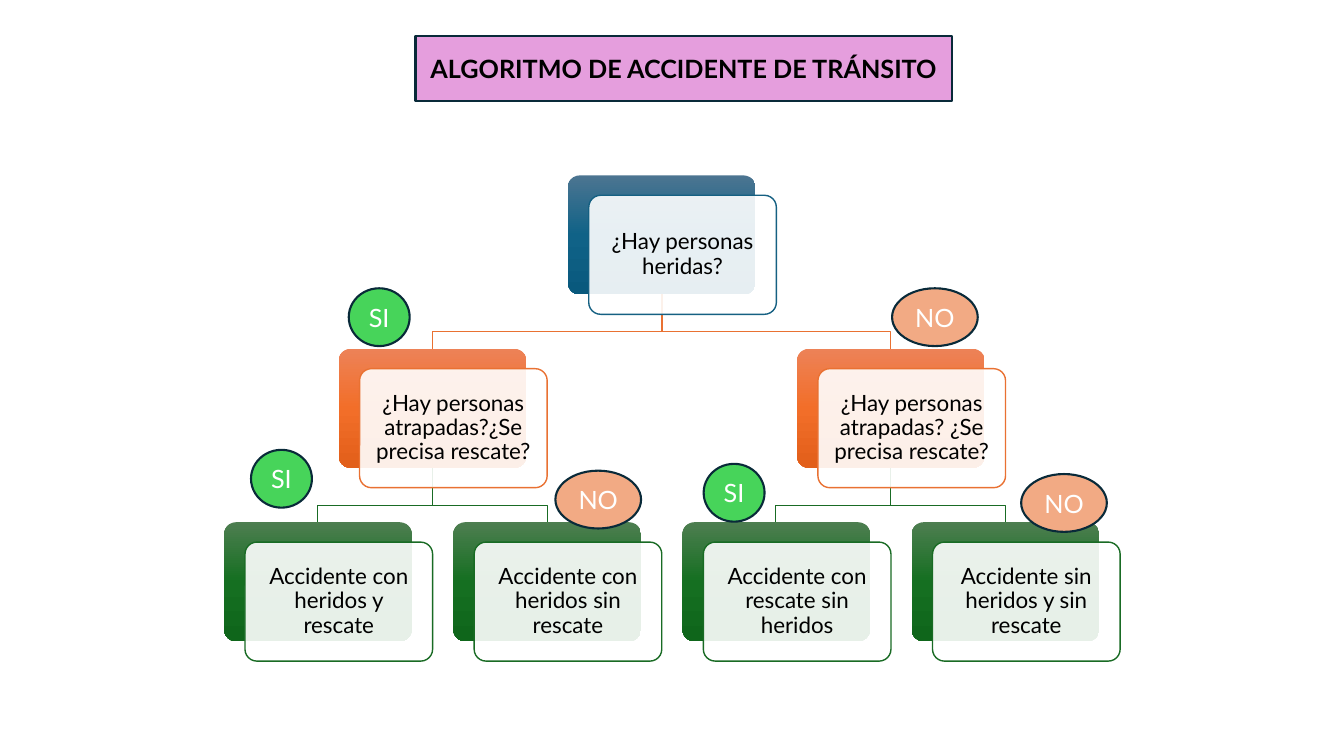
from dataclasses import dataclass
from copy import deepcopy
from typing import Any, NamedTuple

from lxml.etree import SubElement
from pptx import Presentation
from pptx.dml.color import RGBColor
from pptx.enum.shapes import MSO_SHAPE
from pptx.enum.text import MSO_ANCHOR, PP_ALIGN
from pptx.oxml.ns import qn
from pptx.util import Pt


class Level(NamedTuple):
    line: str
    gradient: tuple[str, str, str]


@dataclass(frozen=True)
class Theme:
    font: str = "Lato"
    card_size: float = 16
    label_size: float = 18
    black: str = "000000"
    white: str = "FFFFFF"
    outline: str = "092A39"
    title: str = "E59EDD"
    yes: str = "47D45A"
    no: str = "F2AA84"
    levels: tuple[Level, ...] = (
        Level("156082", ("4C7591", "106287", "09597D")),
        Level("E97132", ("ED8257", "F26E29", "E25F1A")),
        Level("196B24", ("4D7E50", "156F21", "0F661B")),
    )


class Box(NamedTuple):
    x: float
    y: float
    w: float
    h: float


class Card(NamedTuple):
    text: str
    level: int
    column: float  # in leaf widths; a parent sits midway between its children
    parent: int | None = None


class Badge(NamedTuple):
    text: str
    x: float
    y: float


THEME = Theme()
LEFT, TOP = 160.1, 125.3
COLUMN_STEP, ROW_STEP = 163.7, 123.85
CARD_W, CARD_H = 134, 85
FRONT_DX, FRONT_DY = 14.9, 14.2
ELBOW_RISE = 12.2
BADGE_H = 41.3
BADGE_STYLE = {"SI": (43.5, THEME.yes), "NO": (61.2, THEME.no)}

CARDS = [
    Card("¿Hay personas heridas?", 0, 1.5),
    Card("¿Hay personas atrapadas?¿Se precisa rescate?", 1, 0.5, 0),
    Card("¿Hay personas atrapadas? ¿Se precisa rescate?", 1, 2.5, 0),
    Card("Accidente con heridos y rescate", 2, 0, 1),
    Card("Accidente con heridos sin rescate", 2, 1, 1),
    Card("Accidente con rescate sin heridos", 2, 2, 2),
    Card("Accidente sin heridos y sin rescate", 2, 3, 2),
]
BADGES = [
    Badge("SI", 249.1, 205.9),
    Badge("SI", 179.3, 321.3),
    Badge("SI", 502.6, 331.3),
    Badge("NO", 396.7, 336.2),
    Badge("NO", 637.2, 205.9),
    Badge("NO", 729.4, 338.6),
]


def rgb(value: str) -> RGBColor:
    return RGBColor.from_string(value)


def apply(target: Any, formats: dict[str, Any]) -> None:
    for name, value in formats.items():
        setattr(target, name, value)


def card_box(card: Card) -> Box:
    return Box(LEFT + card.column * COLUMN_STEP, TOP + card.level * ROW_STEP, CARD_W, CARD_H)


def set_line(sp: Any, color: str, width: float) -> None:
    sp.line.color.rgb = rgb(color)
    sp.line.width = Pt(width)


def add_box(slide: Any, kind: MSO_SHAPE, box: Box, fill: str | None = None) -> Any:
    """Add a shadowless, unlined shape, solid when a fill is given."""
    sp = slide.shapes.add_shape(kind, *(Pt(v) for v in box))
    sp.shadow.inherit = False
    sp.line.fill.background()
    if kind == MSO_SHAPE.ROUNDED_RECTANGLE:
        sp.adjustments[0] = 0.1
    if fill:
        sp.fill.solid()
        sp.fill.fore_color.rgb = rgb(fill)
    return sp


def set_text(sp: Any, text: str, size: float, color: str, bold: bool = False,
             inset: float = 7, wrap: bool = True, spacing: float = 1.0) -> None:
    tf = sp.text_frame
    margins = {f"margin_{side}": Pt(inset) for side in ("left", "right", "top", "bottom")}
    apply(tf, {"word_wrap": wrap, "vertical_anchor": MSO_ANCHOR.MIDDLE, **margins})
    p = tf.paragraphs[0]
    apply(p, {"alignment": PP_ALIGN.CENTER, "line_spacing": spacing})
    r = p.add_run()
    r.text = text
    apply(r.font, {"name": THEME.font, "size": Pt(size), "bold": bold})
    r.font.color.rgb = rgb(color)


def set_gradient(sp: Any, colors: tuple[str, str, str]) -> None:
    """Fill from top to bottom with three evenly spaced stops."""
    sp.fill.gradient()
    sp.fill.gradient_angle = 270
    stops = sp._element.spPr.find(qn("a:gradFill")).find(qn("a:gsLst"))
    stops.insert(1, deepcopy(stops[0]))
    stops[1].set("pos", "50000")
    for stop, color in zip(sp.fill.gradient_stops, colors):
        stop.color.rgb = rgb(color)


def add_branch(slide: Any, parent: Card, child: Card) -> None:
    start, end = card_box(parent), card_box(child)
    x1, x2 = start.x + CARD_W / 2, end.x + CARD_W / 2
    elbow = end.y - ELBOW_RISE
    builder = slide.shapes.build_freeform(x1, start.y + CARD_H, scale=Pt(1))
    builder.add_line_segments([(x1, elbow), (x2, elbow), (x2, end.y)], close=False)
    sp = builder.convert_to_shape()
    sp.shadow.inherit = False
    sp.fill.background()
    set_line(sp, THEME.levels[child.level].line, 1)


def add_card(slide: Any, card: Card) -> None:
    """Draw the gradient back plate and the translucent text plate over it."""
    box, level = card_box(card), THEME.levels[card.level]
    back = add_box(slide, MSO_SHAPE.ROUNDED_RECTANGLE, box)
    set_gradient(back, level.gradient)
    front_box = box._replace(x=box.x + FRONT_DX, y=box.y + FRONT_DY)
    front = add_box(slide, MSO_SHAPE.ROUNDED_RECTANGLE, front_box, THEME.white)
    color = front._element.spPr.find(qn("a:solidFill")).find(qn("a:srgbClr"))
    SubElement(color, qn("a:alpha")).set("val", "90000")
    set_line(front, level.line, 1)
    set_text(front, card.text, THEME.card_size, THEME.black, spacing=0.9)


def add_badge(slide: Any, badge: Badge) -> None:
    width, fill = BADGE_STYLE[badge.text]
    sp = add_box(slide, MSO_SHAPE.OVAL, Box(badge.x, badge.y, width, BADGE_H), fill)
    set_line(sp, THEME.outline, 1.5)
    set_text(sp, badge.text, THEME.label_size, THEME.white, inset=0, wrap=False)


def add_title(slide: Any) -> None:
    sp = add_box(slide, MSO_SHAPE.RECTANGLE, Box(296.8, 25.5, 383, 46.5), THEME.title)
    set_line(sp, THEME.outline, 1.5)
    set_text(sp, "ALGORITMO DE ACCIDENTE DE TRÁNSITO", THEME.label_size, THEME.black, bold=True)


def main() -> None:
    prs = Presentation()
    apply(prs, {"slide_width": Pt(960), "slide_height": Pt(540)})
    slide = prs.slides.add_slide(prs.slide_layouts[6])
    for card in CARDS:
        if card.parent is not None:
            add_branch(slide, CARDS[card.parent], card)
    for card in CARDS:
        add_card(slide, card)
    add_title(slide)
    for badge in BADGES:
        add_badge(slide, badge)
    prs.save("out.pptx")


if __name__ == "__main__":
    main()
